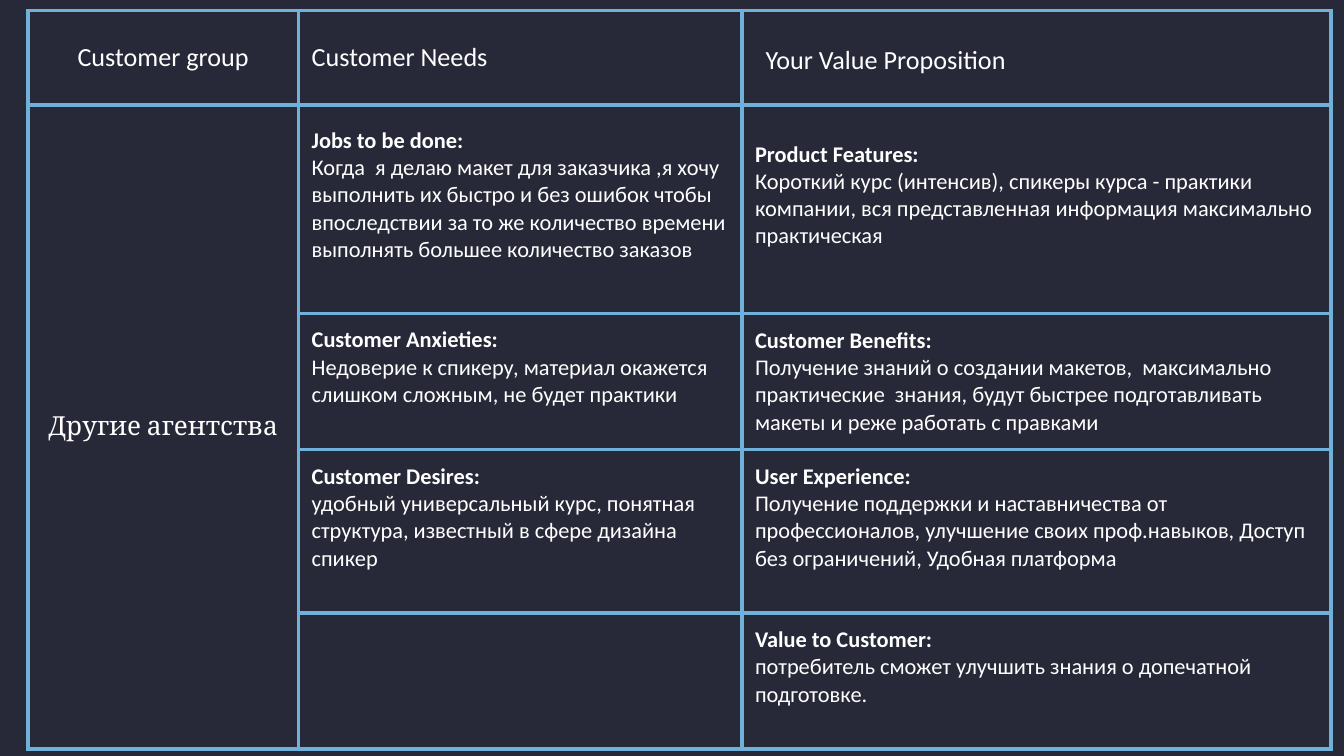
from dataclasses import dataclass

from lxml import etree
from pptx import Presentation
from pptx import util as u
from pptx.dml.color import RGBColor
from pptx.enum import text
from pptx.oxml import ns
from pptx.table import Table, _Cell

NAVY = RGBColor(0x28, 0x29, 0x38)
SKY = RGBColor(0x70, 0xB1, 0xDA)
WHITE = RGBColor(0xFF, 0xFF, 0xFF)

COLUMN_WIDTHS = [5.11, 8.38, 11.13]
ROW_HEIGHTS = [1.78, 3.94, 2.57, 3.09, 2.57]
INSET = 0.25
RAISED_INSET = 0.77


@dataclass(frozen=True)
class Label:
    row: int
    column: int
    wording: str
    centered: bool = False
    typeface: str = "Calibri"


@dataclass(frozen=True)
class Entry:
    row: int
    column: int
    heading: str
    details: str
    bottom_inset: float = RAISED_INSET


LABELS = [
    Label(0, 0, "Customer group", centered=True),
    Label(0, 1, "Customer Needs"),
    Label(0, 2, "Your Value Proposition"),
    Label(1, 0, "Другие агентства", centered=True, typeface="Cambria"),
]

ENTRIES = [
    Entry(1, 1, "Jobs to be done:",
          "Когда  я делаю макет для заказчика ,я хочу выполнить их быстро и без ошибок "
          "чтобы впоследствии за то же количество времени выполнять большее количество заказов"),
    Entry(1, 2, "Product Features:",
          "Короткий курс (интенсив), cпикеры курса - практики компании, "
          "вся представленная информация максимально практическая"),
    Entry(2, 1, "Customer Anxieties:",
          "Недоверие к спикеру, материал окажется слишком сложным, не будет практики"),
    Entry(2, 2, "Customer Benefits:",
          "Получение знаний о создании макетов,  максимально практические  знания, "
          "будут быстрее подготавливать макеты и реже работать с правками",
          bottom_inset=INSET),
    Entry(3, 1, "Customer Desires:",
          "удобный универсальный курс, понятная структура, известный в сфере дизайна спикер"),
    Entry(3, 2, "User Experience:",
          "Получение поддержки и наставничества от профессионалов, улучшение своих "
          "проф.навыков, Доступ без ограничений, Удобная платформа"),
    Entry(4, 2, "Value to Customer:",
          "потребитель сможет улучшить знания о допечатной подготовке."),
]


def frame_cell(cell: _Cell) -> None:
    properties = cell._tc.get_or_add_tcPr()
    for side in ("lnL", "lnR", "lnT", "lnB"):
        border = etree.SubElement(properties, ns.qn(f"a:{side}"), w=str(u.Pt(2.25)))
        fill = etree.SubElement(border, ns.qn("a:solidFill"))
        etree.SubElement(fill, ns.qn("a:srgbClr"), val=str(SKY))
    cell.fill.background()
    cell.vertical_anchor = text.MSO_ANCHOR.MIDDLE
    cell.margin_left = cell.margin_right = u.Cm(INSET)
    cell.margin_top = cell.margin_bottom = u.Cm(INSET)


def style_paragraph(paragraph, size: int, typeface: str = "Calibri", bold: bool = False) -> None:
    paragraph.font.size = u.Pt(size)
    paragraph.font.name = typeface
    paragraph.font.bold = bold
    paragraph.font.color.rgb = WHITE


def write_label(table: Table, label: Label) -> None:
    paragraph = table.cell(label.row, label.column).text_frame.paragraphs[0]
    paragraph.text = label.wording
    style_paragraph(paragraph, 14, label.typeface)
    if label.centered:
        paragraph.alignment = text.PP_ALIGN.CENTER


def write_entry(table: Table, entry: Entry) -> None:
    cell = table.cell(entry.row, entry.column)
    cell.margin_bottom = u.Cm(entry.bottom_inset)
    cell.text_frame.text = f"{entry.heading}\n{entry.details}"
    heading, details = cell.text_frame.paragraphs
    style_paragraph(heading, 12, bold=True)
    style_paragraph(details, 12)


def space_proposition(table: Table) -> None:
    proposition = table.cell(0, 2).text_frame.paragraphs[0]
    proposition.line_spacing = 1.15
    proposition.space_before = proposition.space_after = u.Pt(12)
    proposition._p.get_or_add_pPr().set("marL", str(u.Cm(0.2)))


def main() -> None:
    deck = Presentation()
    deck.slide_width, deck.slide_height = u.Cm(25.4), u.Cm(14.28)
    slide = deck.slides.add_slide(deck.slide_layouts[6])
    slide.background.fill.solid()
    slide.background.fill.fore_color.rgb = NAVY

    canvas = slide.shapes.add_table(
        len(ROW_HEIGHTS), len(COLUMN_WIDTHS), u.Cm(0.53), u.Cm(0.2),
        u.Cm(sum(COLUMN_WIDTHS)), u.Cm(sum(ROW_HEIGHTS))).table
    canvas.first_row = canvas.horz_banding = False
    for column, width in zip(canvas.columns, COLUMN_WIDTHS):
        column.width = u.Cm(width)
    for row, height in zip(canvas.rows, ROW_HEIGHTS):
        row.height = u.Cm(height)
    for cell in canvas.iter_cells():
        frame_cell(cell)
    canvas.cell(1, 0).merge(canvas.cell(4, 0))

    for label in LABELS:
        write_label(canvas, label)
    space_proposition(canvas)
    for entry in ENTRIES:
        write_entry(canvas, entry)

    deck.save("out.pptx")


if __name__ == "__main__":
    main()
